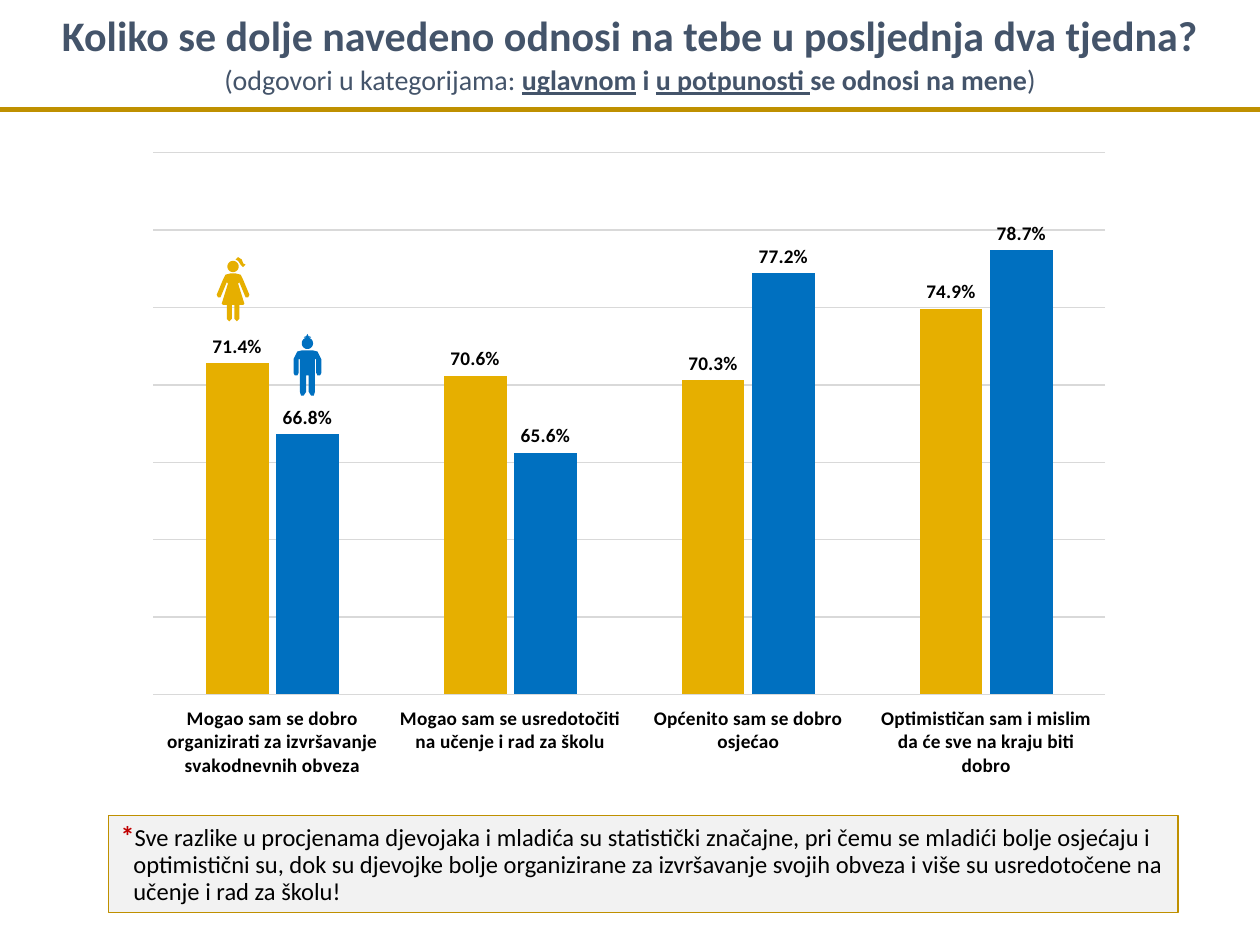
from dataclasses import dataclass
from math import cos, pi, sin

from lxml import etree
from pptx import Presentation
from pptx.chart.data import CategoryChartData
from pptx.dml.color import RGBColor
from pptx.enum.chart import XL_CHART_TYPE, XL_LABEL_POSITION, XL_TICK_LABEL_POSITION, XL_TICK_MARK
from pptx.enum.shapes import MSO_CONNECTOR, MSO_SHAPE
from pptx.enum.text import MSO_ANCHOR, MSO_AUTO_SIZE, PP_ALIGN
from pptx.oxml.ns import qn
from pptx.util import Inches, Pt

COLUMNS = XL_CHART_TYPE.COLUMN_CLUSTERED
LABELS_ABOVE = XL_LABEL_POSITION.OUTSIDE_END
LABELS_LOW = XL_TICK_LABEL_POSITION.LOW
NO_TICKS = XL_TICK_MARK.NONE
CENTER, LEFT = PP_ALIGN.CENTER, PP_ALIGN.LEFT


@dataclass(frozen=True)
class Theme:
    font: str = "Calibri"
    heading: str = "44546A"
    gold: str = "BF9000"
    girls: str = "E6AF00"
    boys: str = "0070C0"
    grid: str = "D9D9D9"
    panel: str = "F2F2F2"
    star: str = "C00000"
    text: str = "000000"
    title_size: int = 24
    subtitle_size: int = 16
    note_size: int = 14
    chart_size: int = 11


THEME = Theme()

CATEGORIES = [
    "Mogao sam se dobro organizirati za izvršavanje svakodnevnih obveza",
    "Mogao sam se usredotočiti na učenje i rad za školu",
    "Općenito sam se dobro osjećao",
    "Optimističan sam i mislim da će sve na kraju biti dobro",
]
SERIES = [
    ("Series 1", [0.714, 0.706, 0.703, 0.749], THEME.girls),
    ("Series 2", [0.668, 0.656, 0.772, 0.787], THEME.boys),
]

# Right half of each body and the hair: inches from the top centre of the figure
GIRL_BODY = [(0.02, 0.13), (0.06, 0.14), (0.08, 0.18), (0.13, 0.3), (0.12, 0.32),
             (0.1, 0.32), (0.05, 0.2), (0.04, 0.21), (0.09, 0.37), (0.08, 0.38),
             (0.05, 0.38), (0.05, 0.49), (0.03, 0.51), (0.01, 0.49), (0.01, 0.38)]
GIRL_HAIR = [(0.02, 0.02), (0.04, 0), (0.07, 0.02), (0.08, 0.05), (0.1, 0.06),
             (0.08, 0.08), (0.06, 0.06), (0.04, 0.03)]
BOY_BODY = [(0.04, 0.13), (0.08, 0.14), (0.11, 0.2), (0.11, 0.31), (0.1, 0.33),
            (0.08, 0.33), (0.07, 0.31), (0.07, 0.2), (0.06, 0.2), (0.06, 0.46),
            (0.05, 0.49), (0.03, 0.49), (0.01, 0.46), (0.01, 0.33)]
BOY_HAIR = [(-0.03, 0.03), (-0.02, 0.02), (-0.01, 0.02), (0, 0), (0.01, 0.02),
            (0.02, 0.02), (0.03, 0.03)]


def color(value):
    return RGBColor.from_string(value)


def format_font(font, size, fill, bold=False, underline=False):
    font.name, font.size = THEME.font, Pt(size)
    font.bold, font.underline = bold, underline
    font.color.rgb = color(fill)


def add_text(paragraph, text, align=LEFT, spacing=1.0, **font_format):
    paragraph.alignment, paragraph.line_spacing = align, spacing
    run = paragraph.add_run()
    run.text = text
    format_font(run.font, **font_format)


def add_heading(slide, left, top, width, height):
    title = slide.shapes.title
    title.left, title.top = Inches(left), Inches(top)
    title.width, title.height = Inches(width), Inches(height)
    frame = title.text_frame
    frame.word_wrap = True
    frame.vertical_anchor = MSO_ANCHOR.TOP
    frame.auto_size = MSO_AUTO_SIZE.SHAPE_TO_FIT_TEXT
    shared = dict(align=CENTER, spacing=1.07, fill=THEME.heading)
    add_text(frame.paragraphs[0],
             "Koliko se dolje navedeno odnosi na tebe u posljednja dva tjedna?",
             size=THEME.title_size, bold=True, **shared)
    subtitle = frame.add_paragraph()
    for text, bold, underline in [
        ("(odgovori u kategorijama: ", False, False),
        ("uglavnom", True, True),
        (" i ", True, False),
        ("u potpunosti ", True, True),
        ("se odnosi na mene", True, False),
        (")", False, False),
    ]:
        add_text(subtitle, text, size=THEME.subtitle_size, bold=bold,
                 underline=underline, **shared)


def add_rule(slide, left, top, width):
    line = slide.shapes.add_connector(
        MSO_CONNECTOR.STRAIGHT, Inches(left), Inches(top), Inches(left + width), Inches(top))
    line.line.color.rgb, line.line.width = color(THEME.gold), Pt(3)
    etree.SubElement(line._element.spPr, qn("a:effectLst"))


def add_note(slide, left, top, width, height):
    note = slide.shapes.add_shape(
        MSO_SHAPE.RECTANGLE, Inches(left), Inches(top), Inches(width), Inches(height))
    note.shadow.inherit = False
    note.fill.solid()
    note.fill.fore_color.rgb = color(THEME.panel)
    note.line.color.rgb, note.line.width = color(THEME.gold), Pt(0.75)
    frame = note.text_frame
    frame.word_wrap = True
    frame.auto_size = MSO_AUTO_SIZE.SHAPE_TO_FIT_TEXT
    paragraph = frame.paragraphs[0]
    add_text(paragraph, "*", spacing=0.9, size=THEME.subtitle_size, fill=THEME.star, bold=True)
    add_text(paragraph,
             "Sve razlike u procjenama djevojaka i mladića su statistički značajne, "
             "pri čemu se mladići bolje osjećaju i optimistični su, dok su djevojke "
             "bolje organizirane za izvršavanje svojih obveza i više su usredotočene "
             "na učenje i rad za školu!",
             spacing=0.9, size=THEME.note_size, fill=THEME.text)
    # Hanging indent for the asterisk
    properties = paragraph._p.get_or_add_pPr()
    properties.set("marL", str(Inches(0.1)))
    properties.set("indent", str(Inches(-0.1)))


def set_plot_area(chart, **fractions):
    plot_area = chart._chartSpace.chart.plotArea
    for old_layout in plot_area.findall(qn("c:layout")):
        plot_area.remove(old_layout)
    layout = etree.Element(qn("c:layout"))
    plot_area.insert(0, layout)
    manual = etree.SubElement(layout, qn("c:manualLayout"))
    settings = dict(layoutTarget="inner", xMode="edge", yMode="edge", **fractions)
    for name, value in settings.items():
        etree.SubElement(manual, qn(f"c:{name}")).set("val", str(value))


def add_answer_chart(slide, left, top, width, height):
    data = CategoryChartData(number_format="0.0%")
    data.categories = CATEGORIES
    for name, values, _ in SERIES:
        data.add_series(name, values)
    chart = slide.shapes.add_chart(
        COLUMNS, Inches(left), Inches(top), Inches(width), Inches(height), data).chart
    format_font(chart.font, THEME.chart_size, THEME.text, bold=True)
    chart.has_legend = chart.has_title = False
    set_plot_area(chart, x=0.02, y=0.02, w=0.96, h=0.84)

    # Axes
    value_axis, category_axis = chart.value_axis, chart.category_axis
    value_axis.minimum_scale, value_axis.maximum_scale = 0.5, 0.85
    value_axis.major_unit = 0.05
    value_axis.visible = False
    category_axis.major_tick_mark = category_axis.minor_tick_mark = NO_TICKS
    category_axis.tick_label_position = LABELS_LOW
    format_font(category_axis.tick_labels.font, THEME.chart_size, THEME.text, bold=True)
    for line in (value_axis.major_gridlines.format.line, category_axis.format.line):
        line.color.rgb, line.width = color(THEME.grid), Pt(0.75)

    # Columns and their labels
    plot = chart.plots[0]
    plot.gap_width, plot.overlap, plot.vary_by_categories = 167, -12, False
    for series, (_, _, fill) in zip(plot.series, SERIES):
        series.format.fill.solid()
        series.format.fill.fore_color.rgb = color(fill)
        labels = series.data_labels
        labels.show_value, labels.position = True, LABELS_ABOVE
        labels.number_format, labels.number_format_is_linked = "0.0%", False
        format_font(labels.font, THEME.chart_size, THEME.text, bold=True)


def add_figure(slide, center, top, half_body, hair, fill):
    head = [(0.045 * cos(step * pi / 12), 0.075 + 0.045 * sin(step * pi / 12))
            for step in range(24)]
    body = half_body + [(-x, y) for x, y in reversed(half_body)]
    head, body, hair = (
        [(Inches(center + x), Inches(top + y)) for x, y in outline]
        for outline in (head, body, hair))
    builder = slide.shapes.build_freeform(*head[0])
    builder.add_line_segments(head[1:])
    for outline in (hair, body):
        builder.move_to(*outline[0])
        builder.add_line_segments(outline[1:])
    figure = builder.convert_to_shape()
    figure.shadow.inherit = False
    figure.fill.solid()
    figure.fill.fore_color.rgb = color(fill)
    figure.line.fill.background()


def main():
    presentation = Presentation()
    presentation.slide_width, presentation.slide_height = Inches(10), Inches(7.5)
    slide = presentation.slides.add_slide(presentation.slide_layouts[5])
    add_heading(slide, 0, 0, 10, 0.8)
    add_rule(slide, 0, 0.87, 10)
    add_note(slide, 0.86, 6.47, 8.49, 0.77)
    add_answer_chart(slide, 1.06, 1.11, 7.87, 5.12)
    add_figure(slide, 1.85, 2.04, GIRL_BODY, GIRL_HAIR, THEME.girls)
    add_figure(slide, 2.44, 2.65, BOY_BODY, BOY_HAIR, THEME.boys)
    presentation.save("out.pptx")


if __name__ == "__main__":
    main()
